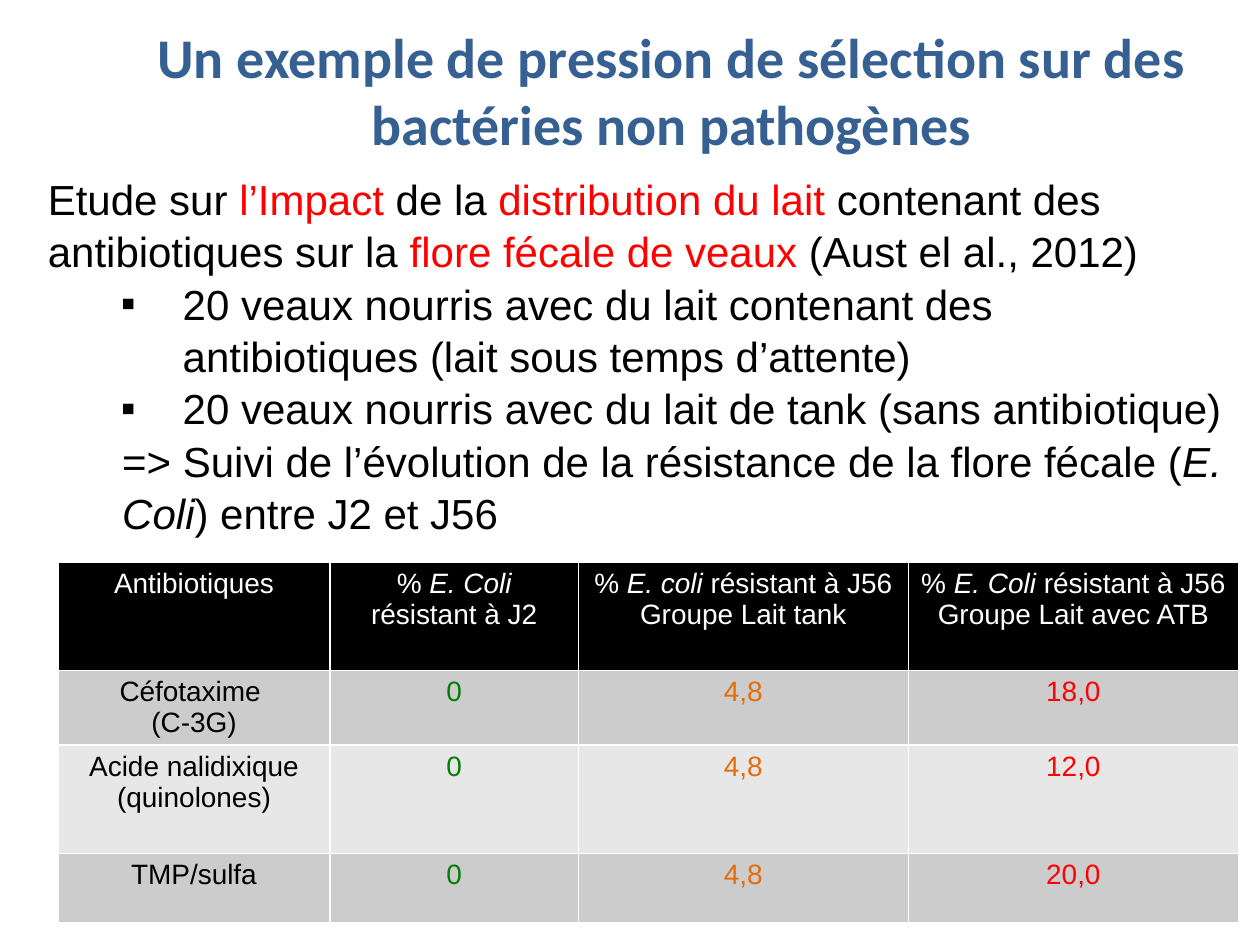
from lxml import etree
from pptx import Presentation
from pptx import util as u
from pptx.dml.color import RGBColor
from pptx.enum import text
from pptx.oxml.ns import qn

HUES = {"blue": "376092", "black": "000000", "white": "FFFFFF", "red": "FF0000",
        "green": "008000", "orange": "E46C0A", "dark": "CCCCCC", "light": "E7E7E7"}

deck = Presentation()
deck.slide_width, deck.slide_height = u.Inches(10), u.Inches(7.5)
slide = deck.slides.add_slide(deck.slide_layouts[1])
title, body = slide.placeholders


def rgb(hue):
    return RGBColor.from_string(HUES[hue])


def write(par, runs, size, hue, face="Arial", bold=False):
    for words, *marks in runs:
        run = par.add_run()
        run.text = words
        look = {"name": face, "size": u.Pt(size), "bold": bold, "italic": "italic" in marks}
        for key, val in look.items():
            setattr(run.font, key, val)
        run.font.color.rgb = rgb("red" if "red" in marks else hue)


boxes = [(title, (0.83, 0.13, 9, 0.95)), (body, (0.28, 1.31, 9.55, 2.93))]
frame = {"word_wrap": True, "auto_size": text.MSO_AUTO_SIZE.NONE,
         "vertical_anchor": text.MSO_ANCHOR.TOP}
for box, spot in boxes:
    for key, val in zip(("left", "top", "width", "height"), spot):
        setattr(box, key, u.Inches(val))
    for key, val in frame.items():
        setattr(box.text_frame, key, val)

head = title.text_frame.paragraphs[0]
head.alignment = text.PP_ALIGN.CENTER
write(head, [("Un exemple de pression de sélection sur des bactéries non pathogènes",)],
      32, "blue", "Calibri", True)

items = [
    (0, 0, None, [("Etude sur ",), ("l’Impact", "red"), (" de la ",),
                  ("distribution du lait ", "red"),
                  ("contenant des antibiotiques sur la ",),
                  ("flore fécale de veaux ", "red"), ("(Aust el al., 2012)",)]),
    (1.07, -0.49, "▪", [("20 veaux nourris avec du lait contenant des antibiotiques "
                         "(lait sous temps d’attente)",)]),
    (1.07, -0.49, "▪", [("20 veaux nourris avec du lait de tank (sans antibiotique)",)]),
    (0.59, 0, None, [("=> Suivi de l’évolution de la résistance de la flore fécale (",),
                     ("E. Coli", "italic"), (") entre J2 et J56",)]),
]
space = {"space_before": u.Pt(0), "space_after": u.Pt(0), "line_spacing": 1.04,
         "alignment": text.PP_ALIGN.LEFT}
for row, (left, hang, mark, runs) in enumerate(items):
    par = body.text_frame.add_paragraph() if row else body.text_frame.paragraphs[0]
    for key, val in space.items():
        setattr(par, key, val)
    props = par._p.get_or_add_pPr()
    props.set("marL", str(u.Inches(left)))
    props.set("indent", str(u.Inches(hang)))
    if mark:
        etree.SubElement(props, qn("a:buFont")).set("typeface", "Arial")
        etree.SubElement(props, qn("a:buChar")).set("char", mark)
    else:
        etree.SubElement(props, qn("a:buNone"))
    write(par, runs, 24, "black")

tests = "résistant à J56"
rows = [
    [[[("Antibiotiques",)]],
     [[("% ",), ("E. Coli ", "italic"), ("résistant à J2",)]],
     [[("% ",), ("E. coli ", "italic"), (tests,)], [("Groupe Lait tank",)]],
     [[("% ",), ("E. Coli ", "italic"), (tests,)], [("Groupe Lait avec ATB",)]]],
]
data = [(["Céfotaxime ", "(C-3G)"], "18,0"),
        (["Acide nalidixique (quinolones)"], "12,0"),
        (["TMP/sulfa"], "20,0")]
for drug, rate in data:
    rows.append([[[(line,)] for line in drug], [[("0",)]], [[("4,8",)]], [[(rate,)]]])

wide = [2.16, 1.97, 2.62, 2.62]
high = [0.86, 0.55, 0.86, 0.55]
grid = slide.shapes.add_table(len(high), len(wide), u.Inches(0.46), u.Inches(4.46),
                              u.Inches(sum(wide)), u.Inches(sum(high))).table
for col, size in zip(grid.columns, wide):
    col.width = u.Inches(size)
for row, size in zip(grid.rows, high):
    row.height = u.Inches(size)

inks = ["black", "green", "orange", "red"]
fills = ["black", "dark", "light", "dark"]
for r, cells in enumerate(rows):
    for c, lines in enumerate(cells):
        cell = grid.cell(r, c)
        cell.fill.solid()
        cell.fill.fore_color.rgb = rgb(fills[r])
        for n, runs in enumerate(lines):
            par = cell.text_frame.add_paragraph() if n else cell.text_frame.paragraphs[0]
            par.alignment = text.PP_ALIGN.CENTER
            write(par, runs, 16, inks[c] if r else "white")

deck.save("out.pptx")
